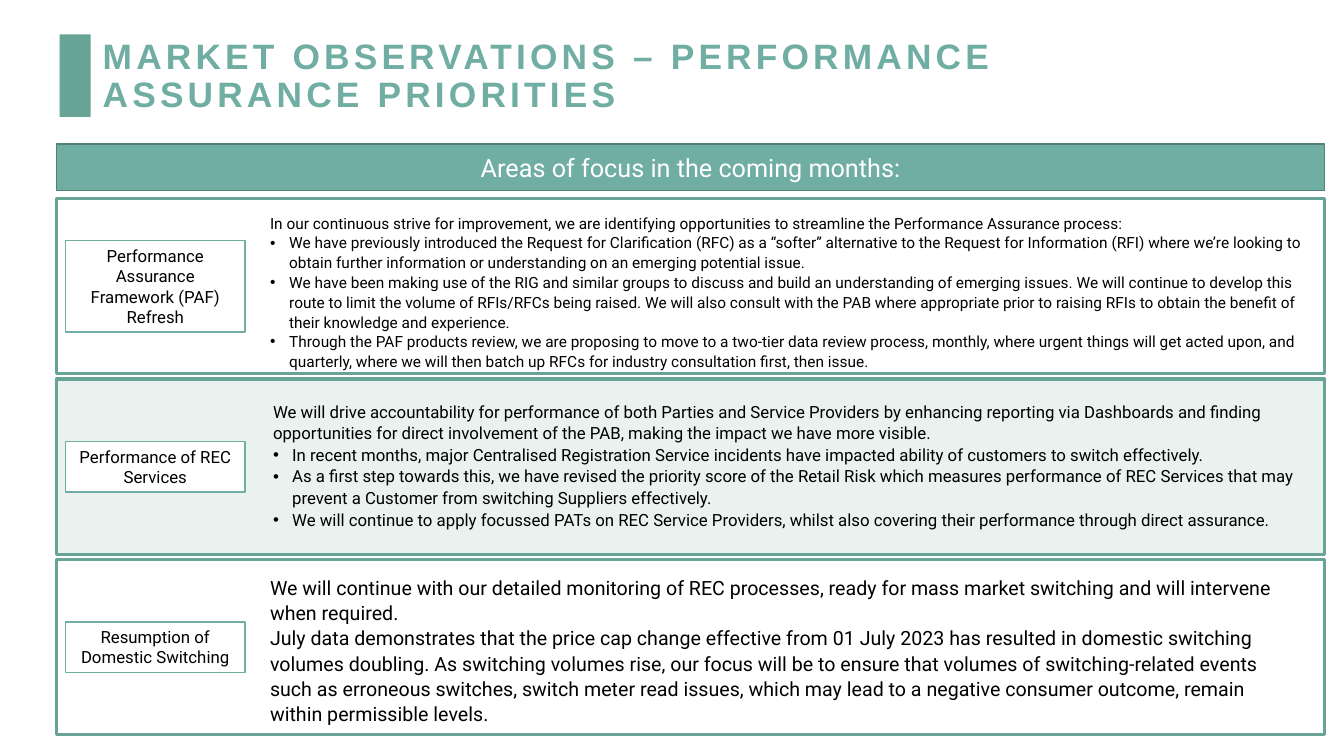
from lxml import etree
from pptx import Presentation
from pptx import util as u
from pptx.dml.color import RGBColor
from pptx.enum import shapes, text
from pptx.oxml.ns import qn

GREEN, TEAL, WHITE, BLACK = "68A495", "70ADA3", "FFFFFF", "000000"
LEFT, WIDTH = 0.56, 12.58
ROW_TOP, ROW_H, ROW_STEP = 1.97, 1.74, 1.79

ROWS = [
    dict(label="Performance Assurance Framework (PAF) Refresh", label_h=0.91, fill=WHITE,
         size=11, body=(2.02, 0.09, 10.57, 1.67),
         paras=[
             (False, "In our continuous strive for improvement, we are identifying opportunities to "
                     "streamline the Performance Assurance process:"),
             (True, "We have previously introduced the Request for Clarification (RFC) as a “softer” "
                    "alternative to the Request for Information (RFI) where we’re looking to obtain "
                    "further information or understanding on an emerging potential issue."),
             (True, "We have been making use of the RIG and similar groups to discuss and build an "
                    "understanding of emerging issues. We will continue to develop this route to limit "
                    "the volume of RFIs/RFCs being raised. We will also consult with the PAB where "
                    "appropriate prior to raising RFIs to obtain the benefit of their knowledge and "
                    "experience."),
             (True, "Through the PAF products review, we are proposing to move to a two-tier data review "
                    "process, monthly, where urgent things will get acted upon, and quarterly, where we "
                    "will then batch up RFCs for industry consultation first, then issue."),
         ]),
    dict(label="Performance of REC Services", label_h=0.5, fill="EAF2F0",
         size=12, body=(2.05, 0.16, 10.34, 1.39),
         paras=[
             (False, "We will drive accountability for performance of both Parties and Service Providers "
                     "by enhancing reporting via Dashboards and finding opportunities for direct "
                     "involvement of the PAB, making the impact we have more visible."),
             (True, "In recent months, major Centralised Registration Service incidents have impacted "
                    "ability of customers to switch effectively."),
             (True, "As a first step towards this, we have revised the priority score of the Retail Risk "
                    "which measures performance of REC Services that may prevent a Customer from "
                    "switching Suppliers effectively."),
             (True, "We will continue to apply focussed PATs on REC Service Providers, whilst also "
                    "covering their performance through direct assurance."),
         ]),
    dict(label="Resumption of Domestic Switching", label_h=0.5, fill=WHITE,
         size=14, body=(2.02, 0.1, 10.36, 1.6),
         paras=[
             (False, "We will continue with our detailed monitoring of REC processes, ready for mass "
                     "market switching and will intervene when required."),
             (False, "July data demonstrates that the price cap change effective from 01 July 2023 has "
                     "resulted in domestic switching volumes doubling. As switching volumes rise, our "
                     "focus will be to ensure that volumes of switching-related events such as erroneous "
                     "switches, switch meter read issues, which may lead to a negative consumer outcome, "
                     "remain within permissible levels."),
         ]),
]


def rgb(value):
    return RGBColor.from_string(value)


def add_run(p, words, size, color, font="Roboto", bold=False):
    r = p.add_run()
    r.text = words
    r.font.name = font
    r.font.size = u.Pt(size)
    r.font.bold = bold
    r.font.color.rgb = rgb(color)
    return r


def add_rect(s, x, y, w, h, fill, line=None, weight=1):
    sp = s.shapes.add_shape(shapes.MSO_SHAPE.RECTANGLE, *map(u.Inches, (x, y, w, h)))
    sp.shadow.inherit = False
    sp.fill.solid()
    sp.fill.fore_color.rgb = rgb(fill)
    if line:
        sp.line.color.rgb = rgb(line)
        sp.line.width = u.Pt(weight)
    else:
        sp.line.fill.background()
    return sp


def add_caption(sp, words, size, color):
    tf = sp.text_frame
    tf.word_wrap = True
    tf.vertical_anchor = text.MSO_ANCHOR.MIDDLE
    p = tf.paragraphs[0]
    p.alignment = text.PP_ALIGN.CENTER
    add_run(p, words, size, color)


def add_textbox(s, x, y, w, h):
    tf = s.shapes.add_textbox(*map(u.Inches, (x, y, w, h))).text_frame
    tf.word_wrap = True
    return tf


def add_bullet(p):
    pPr = p._p.get_or_add_pPr()
    pPr.set("marL", str(u.Inches(0.19)))
    pPr.set("indent", str(-u.Inches(0.19)))
    etree.SubElement(pPr, qn("a:buFont")).set("typeface", "Arial")
    etree.SubElement(pPr, qn("a:buChar")).set("char", "•")


def add_title(s, x, y, w, h):
    add_rect(s, x, y, 0.31, h, GREEN)
    tf = add_textbox(s, x + 0.33, y + 0.06, w, 0.72)
    tf.vertical_anchor = text.MSO_ANCHOR.MIDDLE
    p = tf.paragraphs[0]
    p.line_spacing = 0.9
    r = add_run(p, "MARKET OBSERVATIONS – PERFORMANCE ASSURANCE PRIORITIES", 25.2, TEAL, "Arial", True)
    r.font._element.set("spc", "300")


def add_banner(s, x, y, w, h):
    sp = add_rect(s, x, y, w, h, TEAL, "538079")
    add_caption(sp, "Areas of focus in the coming months:", 18, WHITE)


def add_focus_row(s, x, y, w, h, row):
    add_rect(s, x, y, w, h, row["fill"], GREEN, 2.25)
    label_h = row["label_h"]
    label = add_rect(s, x + 0.09, y + (h - label_h) / 2, 1.78, label_h, WHITE, TEAL)
    add_caption(label, row["label"], 12, BLACK)
    dx, dy, body_w, body_h = row["body"]
    tf = add_textbox(s, x + dx, y + dy, body_w, body_h)
    for i, (bulleted, words) in enumerate(row["paras"]):
        p = tf.add_paragraph() if i else tf.paragraphs[0]
        if bulleted:
            add_bullet(p)
        p.line_spacing = 1.07
        add_run(p, words, row["size"], BLACK)


def main():
    prs = Presentation()
    prs.slide_width, prs.slide_height = u.Inches(13.33), u.Inches(7.5)
    s = prs.slides.add_slide(prs.slide_layouts[6])
    add_title(s, 0.59, 0.34, 10.15, 0.82)
    add_banner(s, LEFT, 1.43, WIDTH, 0.46)
    for i, row in enumerate(ROWS):
        add_focus_row(s, LEFT, ROW_TOP + i * ROW_STEP, WIDTH, ROW_H, row)
    prs.save("out.pptx")


if __name__ == "__main__":
    main()
